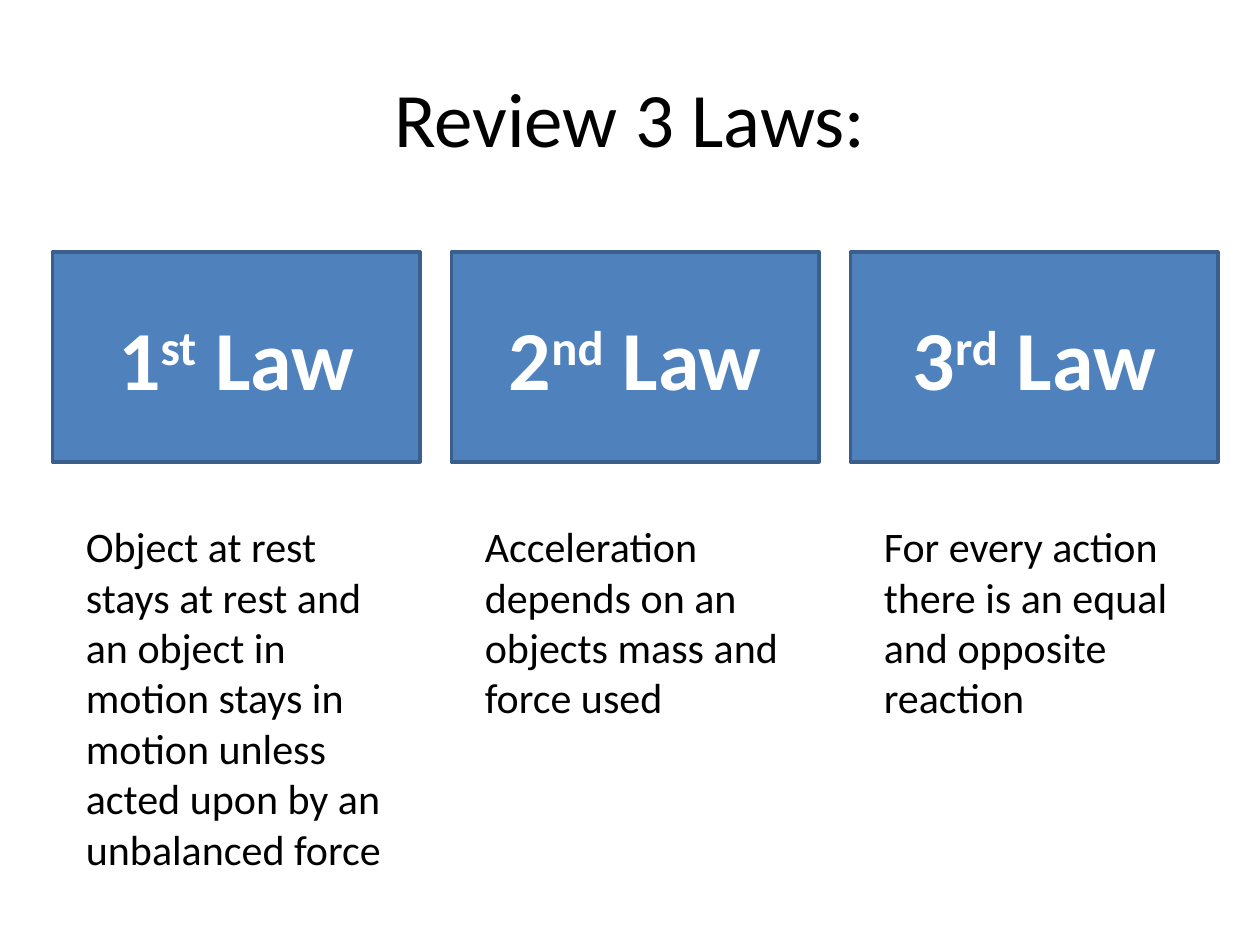
from pptx import Presentation
from pptx.dml.color import RGBColor
from pptx.enum.shapes import MSO_SHAPE
from pptx.enum.text import MSO_ANCHOR, MSO_AUTO_SIZE, PP_ALIGN
from pptx.util import Pt

# Content: number, ordinal ending, statement
TITLE = "Review 3 Laws:"
LAWS = [
    ("1", "st", "Object at rest stays at rest and an object in motion stays in "
                "motion unless acted upon by an unbalanced force"),
    ("2", "nd", "Acceleration depends on an objects mass and force used"),
    ("3", "rd", "For every action there is an equal and opposite reaction"),
]

THEME = {
    "font": "Calibri",
    "text": RGBColor.from_string("000000"),
    "on_box": RGBColor.from_string("FFFFFF"),
    "box": RGBColor.from_string("4F81BD"),
    "border": RGBColor.from_string("3A5F8C"),
    "title_size": 44,
    "law_size": 48,
    "body_size": 24,
}

# Layout in points
LEFT, PITCH = 30, 228
BOX_TOP, BOX_W, BOX_H = 144, 210, 120
BODY_TOP, BODY_W, INSET = 294, 186, 12
LINE_H, PADDING = 29.2, 7.2


def write(sp, runs, size, color, bold=False, align=PP_ALIGN.LEFT,
          anchor=MSO_ANCHOR.TOP):
    """Fill a shape with one paragraph of (text, superscript percent) runs."""
    tf = sp.text_frame
    tf.word_wrap = True
    tf.vertical_anchor = anchor
    p = tf.paragraphs[0]
    p.alignment = align
    for text, raised in runs:
        r = p.add_run()
        r.text = text
        r.font.name = THEME["font"]
        r.font.size = Pt(size)
        r.font.bold = bold
        r.font.color.rgb = color
        if raised:
            r.font._element.set("baseline", str(raised * 1000))


prs = Presentation()
prs.slide_width, prs.slide_height = Pt(720), Pt(540)
slide = prs.slides.add_slide(prs.slide_layouts[6])

# Title
title = slide.shapes.add_textbox(Pt(36), Pt(21.6), Pt(648), Pt(90))
write(title, [(TITLE, 0)], THEME["title_size"], THEME["text"],
      align=PP_ALIGN.CENTER, anchor=MSO_ANCHOR.MIDDLE)

# Law boxes
for i, (number, ending, _) in enumerate(LAWS):
    box = slide.shapes.add_shape(MSO_SHAPE.RECTANGLE, Pt(LEFT + i * PITCH),
                                 Pt(BOX_TOP), Pt(BOX_W), Pt(BOX_H))
    box.shadow.inherit = False
    box.fill.solid()
    box.fill.fore_color.rgb = THEME["box"]
    box.line.color.rgb = THEME["border"]
    box.line.width = Pt(2)
    write(box, [(number, 0), (ending, 30), (" Law", 0)], THEME["law_size"],
          THEME["on_box"], bold=True, align=PP_ALIGN.CENTER,
          anchor=MSO_ANCHOR.MIDDLE)

# Statements under the boxes
for i, ((_, _, statement), lines) in enumerate(zip(LAWS, (7, 4, 4))):
    body = slide.shapes.add_textbox(Pt(LEFT + INSET + i * PITCH), Pt(BODY_TOP),
                                    Pt(BODY_W), Pt(lines * LINE_H + PADDING))
    write(body, [(statement, 0)], THEME["body_size"], THEME["text"])
    body.text_frame.auto_size = MSO_AUTO_SIZE.SHAPE_TO_FIT_TEXT

prs.save("out.pptx")
